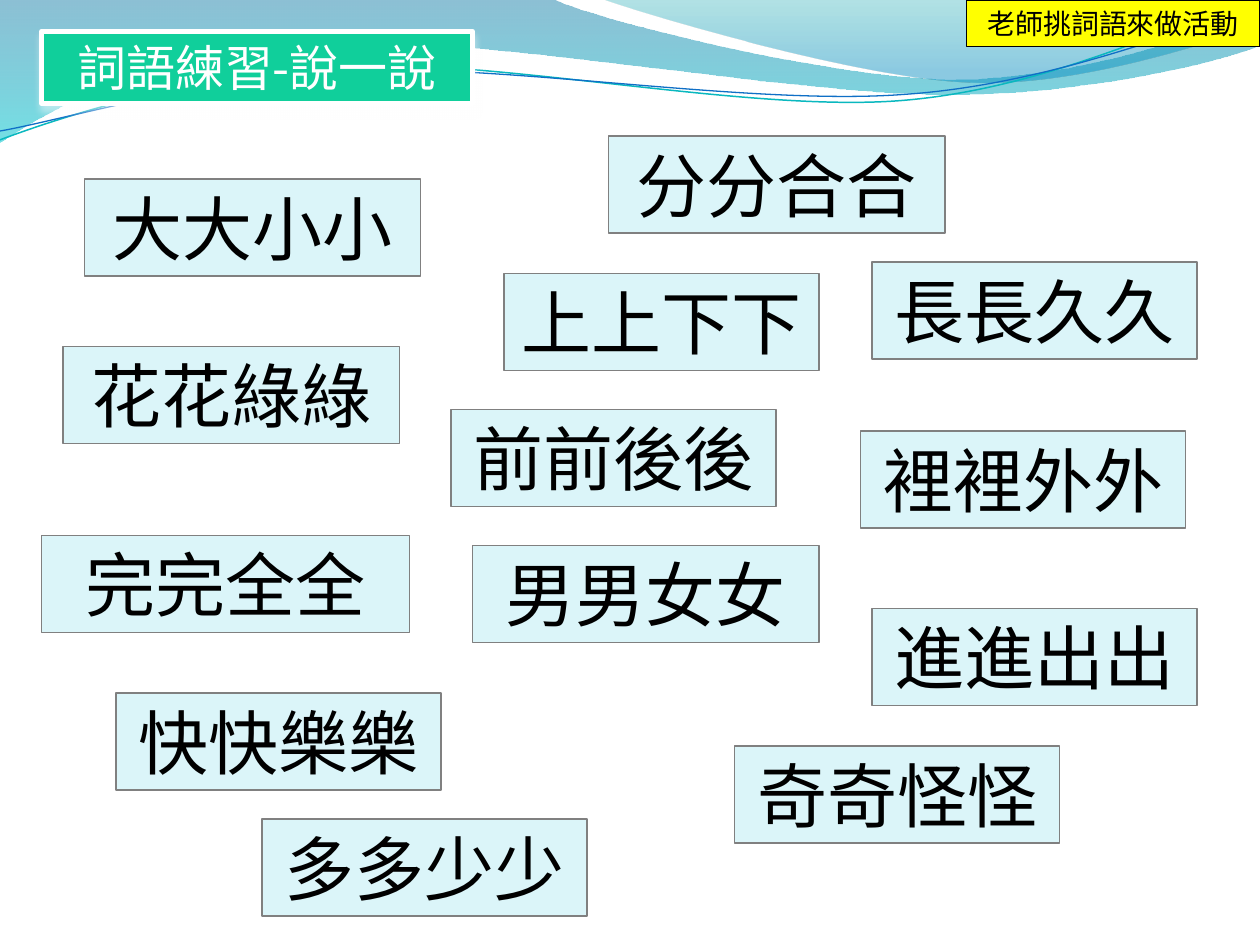
import pptx
import pptx.util
import pptx.dml.color
import pptx.enum.shapes
import pptx.enum.text
import pptx.oxml.ns
import lxml.etree

Inches = pptx.util.Inches
qn = pptx.oxml.ns.qn
RGB = pptx.dml.color.RGBColor.from_string
AUTO_SIZE = pptx.enum.text.MSO_AUTO_SIZE
COLORS = {
    "white": "FFFFFF", "black": "000000", "gray": "808080",
    "card": "DBF5F9", "title": "10CF9B", "note": "FFFF00",
    "deep_blue": "0074A1", "aqua": "00C6CF", "teal": "00A1A9",
    "blue": "008BBF", "teal_line": "0AB8BF", "blue_line": "0F6FC6",
}


def draw_curve(shapes, start, segments, closed):
    """Outline of straight (1 point) and cubic (3 points) segments, in inches."""
    points = [(Inches(x), Inches(y)) for segment in segments for x, y in segment]
    builder = shapes.build_freeform(Inches(start[0]), Inches(start[1]))
    builder.add_line_segments(points, close=closed)
    outline = builder.convert_to_shape()
    outline.shadow.inherit = False
    # Join each set of three points into one cubic curve
    corners = iter(list(outline._element.spPr.iter(qn("a:lnTo"))))
    for segment in segments:
        nodes = [next(corners) for _ in segment]
        if len(nodes) == 3:
            curve = lxml.etree.Element(qn("a:cubicBezTo"))
            nodes[0].addprevious(curve)
            for node in nodes:
                curve.append(node[0])
                node.getparent().remove(node)
    return outline


def style_box(box, text, size, fill, line, width, ink, auto_size):
    """Fill, outline and centred text of one box."""
    box.shadow.inherit = False
    box.fill.solid()
    box.fill.fore_color.rgb = RGB(COLORS[fill])
    box.line.color.rgb = RGB(COLORS[line])
    box.line.width = pptx.util.Pt(width)
    frame = box.text_frame
    frame.text = text
    frame_format = {
        "word_wrap": True,
        "auto_size": auto_size,
        "vertical_anchor": pptx.enum.text.MSO_ANCHOR.TOP,
    }
    for name, value in frame_format.items():
        setattr(frame, name, value)
    paragraph = frame.paragraphs[0]
    paragraph.alignment = pptx.enum.text.PP_ALIGN.CENTER
    font = paragraph.runs[0].font
    font_format = {"size": pptx.util.Pt(size), "name": "Noto Sans CJK SC", "bold": False}
    for name, value in font_format.items():
        setattr(font, name, value)
    font.color.rgb = RGB(COLORS[ink])
    east_asian = lxml.etree.Element(qn("a:ea"), typeface="Noto Sans CJK SC")
    font._element.find(qn("a:latin")).addnext(east_asian)


presentation = pptx.Presentation()
presentation.slide_width = Inches(10)
presentation.slide_height = Inches(7.5)
slide = presentation.slides.add_slide(presentation.slide_layouts[5])
shapes = slide.shapes

# Waves along the top: start, segments, gradient stops (position, colour, opacity)
waves = [
    ((0, 0), [
        [(4.4, 0)],
        [(4.76, 0.17), (6.64, 0.63), (7.58, 0.63)],
        [(8.53, 0.63), (9.58, 0.26), (10, 0.09)],
        [(10, 0.36)],
        [(9.83, 0.44), (8.7, 0.76), (7.46, 0.75)],
        [(6.22, 0.75), (3.82, 0.28), (2.57, 0.34)],
        [(1.29, 0.36), (0.46, 0.83), (0, 1.13)],
    ], [(0, "deep_blue", 45), (1, "aqua", 55)]),
    ((4.79, 0), [
        [(5.09, 0.11), (6.82, 0.62), (7.69, 0.65)],
        [(8.56, 0.69), (9.61, 0.32), (10, 0.21)],
        [(10, 0)],
    ], [(0, "teal", 30), (0.8, "blue", 45)]),
]
for start, segments, stops in waves:
    wave = draw_curve(shapes, start, segments, True)
    wave.line.fill.background()
    wave.fill.gradient()
    wave.fill.gradient_angle = 270
    for stop, (position, color, _) in zip(wave.fill.gradient_stops, stops):
        stop.position = position
        stop.color.rgb = RGB(COLORS[color])
    for color_node, (_, _, opacity) in zip(wave._element.spPr.iter(qn("a:srgbClr")), stops):
        lxml.etree.SubElement(color_node, qn("a:alpha"), val=str(opacity * 1000))

# Thin lines that follow the waves
strands = [
    ((0, 1.11), [
        [(0.48, 0.93), (1.58, 0.57), (2.77, 0.52)],
        [(3.95, 0.47), (5.93, 0.89), (7.13, 0.8)],
        [(8.33, 0.71), (9.38, 0.15), (9.98, 0)],
    ], "teal_line", 0.85),
    ((0, 1.04), [
        [(0.47, 0.96), (1.64, 0.61), (2.83, 0.56)],
        [(4.03, 0.51), (5.97, 0.84), (7.17, 0.75)],
        [(8.36, 0.67), (9.41, 0.21), (10, 0.06)],
    ], "blue_line", 0.75),
]
for start, segments, color, width in strands:
    strand = draw_curve(shapes, start, segments, False)
    strand.fill.background()
    strand.line.color.rgb = RGB(COLORS[color])
    strand.line.width = pptx.util.Pt(width)

# Title, in front of the waves, with a soft light shadow
title = shapes.title
shapes._spTree.append(title._element)
title.left, title.top, title.width, title.height = map(Inches, (0.33, 0.25, 3.42, 0.57))
style_box(title, "詞語練習-說一說", 28, "title", "white", 3, "white", AUTO_SIZE.NONE)
shadow = lxml.etree.SubElement(
    title._element.spPr.find(qn("a:effectLst")), qn("a:outerShdw"),
    blurRad=str(pptx.util.Pt(4.5)), dist=str(pptx.util.Pt(3)), dir="5400000", rotWithShape="0")
shadow_color = lxml.etree.SubElement(shadow, qn("a:srgbClr"), val=COLORS["white"])
lxml.etree.SubElement(shadow_color, qn("a:alpha"), val="48000")

# Word cards and the teacher's note: text, left, top, width
words = [
    ("上上下下", 4, 2.17, 2.5),
    ("完完全全", 0.33, 4.25, 2.92),
    ("大大小小", 0.67, 1.42, 2.67),
    ("花花綠綠", 0.5, 2.75, 2.67),
    ("男男女女", 3.75, 4.33, 2.75),
    ("快快樂樂", 0.92, 5.5, 2.58),
    ("多多少少", 2.08, 6.5, 2.58),
    ("分分合合", 4.83, 1.08, 2.67),
    ("長長久久", 6.92, 2.08, 2.58),
    ("奇奇怪怪", 5.83, 5.92, 2.58),
    ("前前後後", 3.58, 3.25, 2.58),
    ("進進出出", 6.92, 4.83, 2.58),
    ("裡裡外外", 6.83, 3.42, 2.58),
]
boxes = [(*word, 0.77, 40, "card", "gray") for word in words]
boxes.append(("老師挑詞語來做活動", 7.67, 0, 2.33, 0.37, 16, "note", "black"))
for text, left, top, width, height, size, fill, line in boxes:
    box = shapes.add_shape(pptx.enum.shapes.MSO_SHAPE.RECTANGLE,
                           Inches(left), Inches(top), Inches(width), Inches(height))
    style_box(box, text, size, fill, line, 0.75, "black", AUTO_SIZE.SHAPE_TO_FIT_TEXT)

presentation.save("out.pptx")
